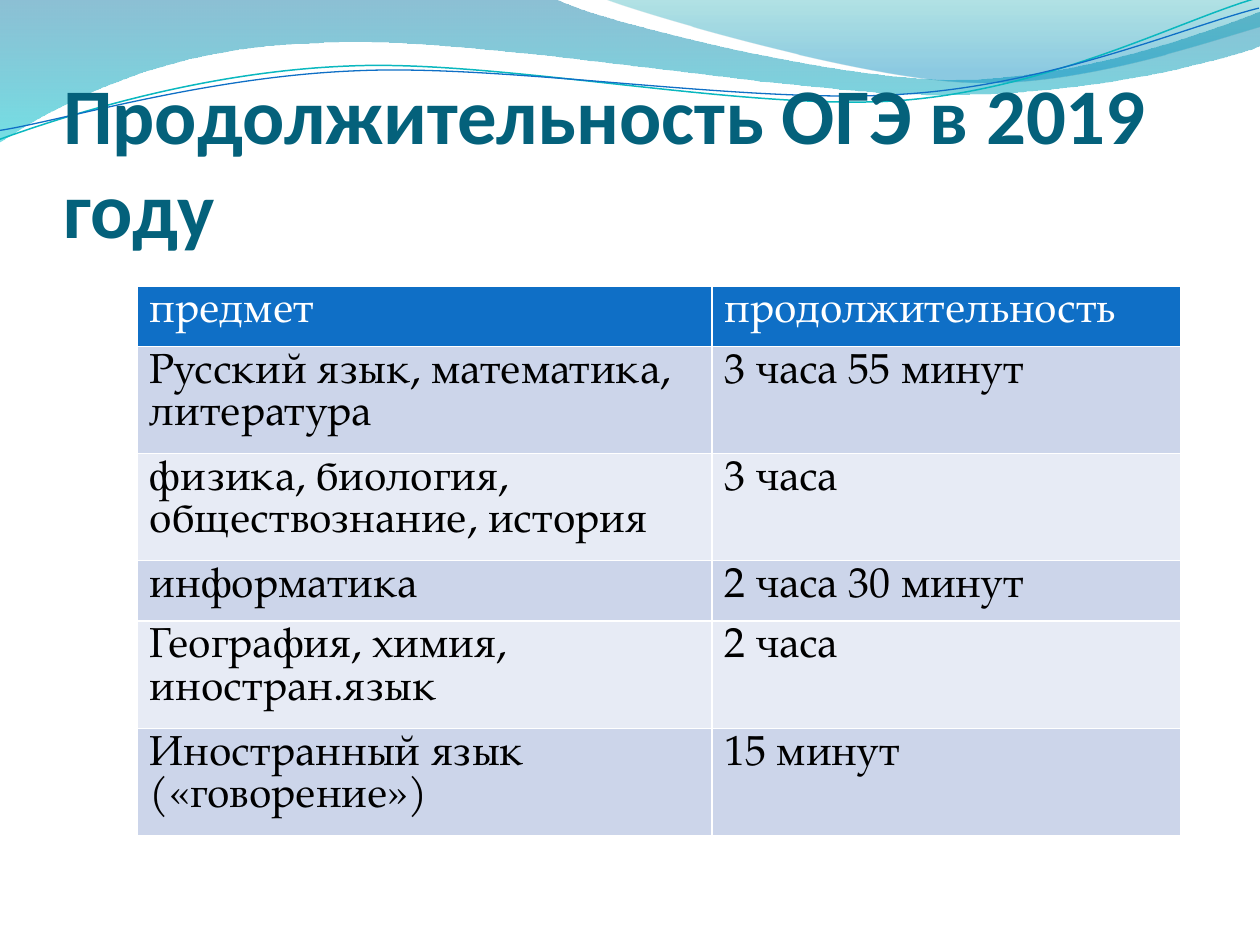
"""Build a slide with a wave header and a table of exam durations."""
from lxml.etree import SubElement
from pptx import Presentation
from pptx.dml.color import RGBColor
from pptx.enum.text import MSO_ANCHOR, MSO_AUTO_SIZE, PP_ALIGN
from pptx.oxml.ns import qn
from pptx.util import Inches, Pt

COLORS = {
    "title": "04617B", "header": "0F6FC6", "odd": "CCD5EA", "even": "E7EBF5",
    "white": "FFFFFF", "black": "000000", "teal": "0AB8BF", "blue": "0F6FC6",
    "wave_top": "0074A1", "wave_end": "00C6CF",
    "crest_top": "00A1A9", "crest_end": "008BBF",
}


def rgb(name):
    return RGBColor.from_string(COLORS[name])


def add_curve(shapes, start, segments, close):
    points = [(Inches(seg[i]), Inches(seg[i + 1]))
              for seg in segments for i in range(0, len(seg), 2)]
    builder = shapes.build_freeform(Inches(start[0]), Inches(start[1]))
    builder.add_line_segments(points, close=close)
    sp = builder.convert_to_shape()
    sp.shadow.inherit = False
    lines = iter(list(sp.element.iter(qn("a:lnTo"))))
    for seg in segments:
        first = next(lines)
        if len(seg) == 6:
            first.tag = qn("a:cubicBezTo")
            curve = SubElement(first.getparent(), qn("a:cubicBezTo"))
            first.getparent().replace(first, curve)
            for line in (first, next(lines), next(lines)):
                curve.append(line[0])
                if line is not first:
                    line.getparent().remove(line)
    return sp


prs = Presentation()
prs.slide_width, prs.slide_height = Inches(10), Inches(7.5)
s = prs.slides.add_slide(prs.slide_layouts[5])

bands = [
    ((0, 0), [(4.4, -0.01), (4.76, 0.17, 6.64, 0.63, 7.58, 0.63),
              (8.53, 0.63, 9.58, 0.26, 10, 0.09), (10.01, 0.36),
              (9.83, 0.44, 8.7, 0.76, 7.46, 0.75),
              (6.22, 0.75, 3.82, 0.28, 2.57, 0.34),
              (1.29, 0.36, 0.46, 0.83, -0.01, 1.13), (0, 0)],
     [("wave_top", 0, 45), ("wave_end", 1, 55)]),
    ((4.79, -0.01), [(5.09, 0.11, 6.82, 0.62, 7.69, 0.65),
                     (8.56, 0.69, 9.61, 0.32, 10, 0.21), (10, 0), (4.79, -0.01)],
     [("crest_top", 0, 30), ("crest_end", 0.8, 45)]),
]
for start, segments, stops in bands:
    sp = add_curve(s.shapes, start, segments, True)
    sp.line.fill.background()
    sp.fill.gradient()
    sp.fill.gradient_angle = 270
    for stop, (color, position, _) in zip(sp.fill.gradient_stops, stops):
        stop.color.rgb = rgb(color)
        stop.position = position
    for clr, (_, _, opacity) in zip(sp.element.iter(qn("a:srgbClr")), stops):
        SubElement(clr, qn("a:alpha")).set("val", str(opacity * 1000))

strands = [
    ((-0.02, 0.87), [(0.47, 0.72, 1.58, 0.41, 2.77, 0.42),
                     (3.96, 0.42, 5.91, 0.93, 7.12, 0.9),
                     (8.32, 0.87, 9.4, 0.36, 10, 0.22)], "teal", 0.85),
    ((-0.02, 0.8), [(0.46, 0.75, 1.64, 0.45, 2.83, 0.46),
                    (4.03, 0.46, 5.96, 0.88, 7.16, 0.85),
                    (8.35, 0.83, 9.42, 0.42, 10.01, 0.3)], "blue", 0.75),
]
for start, segments, color, width in strands:
    sp = add_curve(s.shapes, start, segments, False)
    sp.rotation = 357.3
    sp.fill.background()
    sp.line.color.rgb = rgb(color)
    sp.line.width = Pt(width)

title = s.shapes.title
title.element.getparent().append(title.element)
title.left, title.top = Inches(0.5), Inches(0.77)
title.width, title.height = Inches(9), Inches(1.25)
tf = title.text_frame
tf.text = "Продолжительность ОГЭ в 2019 году"
tf.word_wrap = True
tf.auto_size = MSO_AUTO_SIZE.NONE
tf.vertical_anchor = MSO_ANCHOR.BOTTOM
tf.margin_left = tf.margin_right = tf.margin_bottom = 0
tf.margin_top = Inches(0.05)
p = tf.paragraphs[0]
p.alignment = PP_ALIGN.LEFT
p.font.name, p.font.size, p.font.bold = "Calibri", Pt(45), True
p.font.color.rgb = rgb("title")

rows = [
    ("предмет", "продолжительность", 0.48),
    ("Русский язык, математика, литература", "3 часа 55 минут", 0.85),
    ("физика, биология, обществознание, история", "3 часа", 0.85),
    ("информатика", "2 часа 30 минут", 0.48),
    ("География, химия, иностран.язык", "2 часа", 0.85),
    ("Иностранный язык («говорение»)", "15 минут", 0.85),
]
frame = s.shapes.add_table(len(rows), 2, Inches(1.09), Inches(2.27),
                           Inches(8.28), Inches(4.6))
table = frame.table
table.columns[0].width, table.columns[1].width = Inches(4.56), Inches(3.72)
for i, (*texts, height) in enumerate(rows):
    table.rows[i].height = Inches(height)
    fill = "header" if i == 0 else "odd" if i % 2 else "even"
    for j, text in enumerate(texts):
        cell = table.cell(i, j)
        cell.text = text
        cell.fill.solid()
        cell.fill.fore_color.rgb = rgb(fill)
        p = cell.text_frame.paragraphs[0]
        p.font.name, p.font.size, p.font.bold = "TeX Gyre Pagella", Pt(24), False
        p.font.color.rgb = rgb("black" if i else "white")

prs.save("out.pptx")
